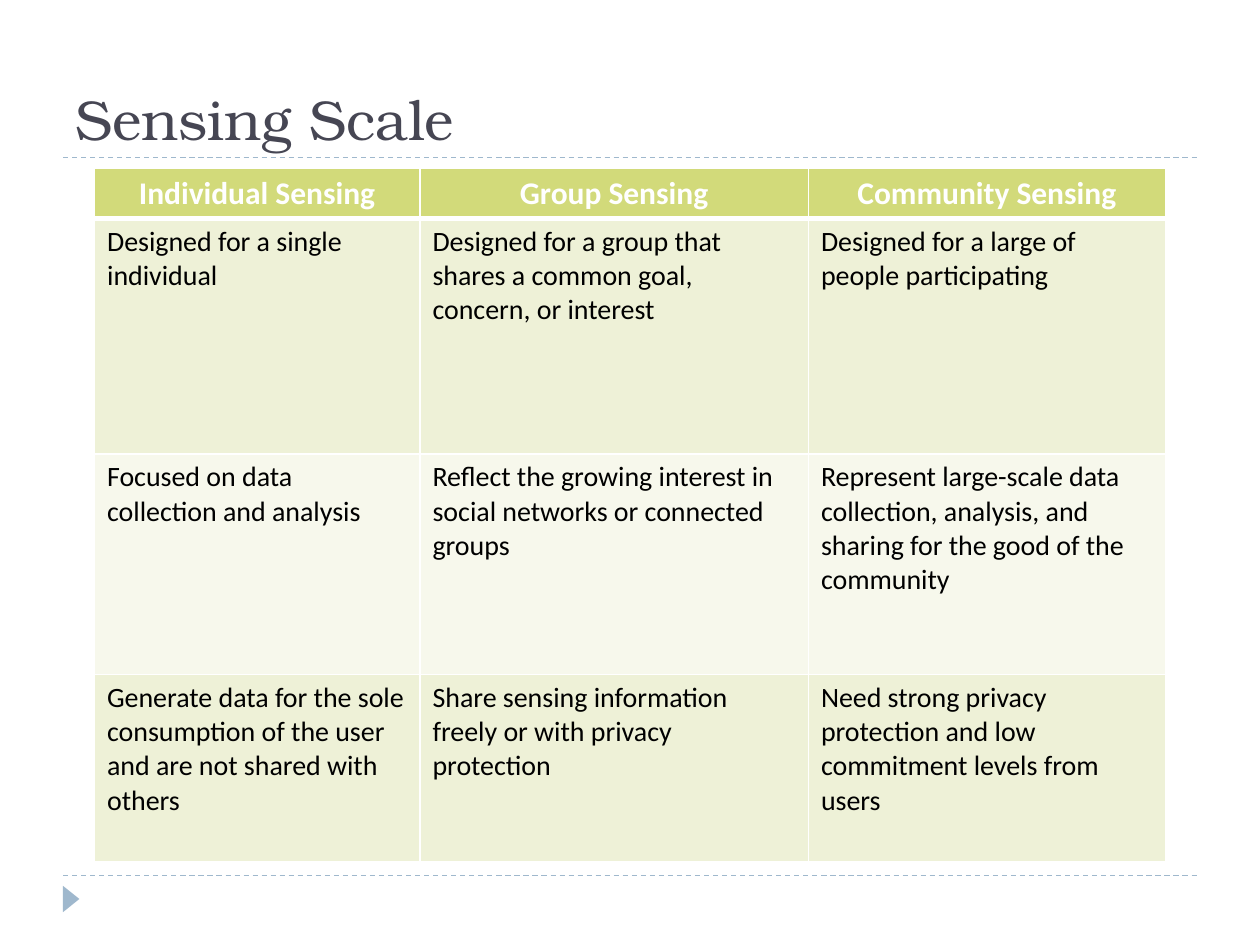
from lxml import etree
from pptx import Presentation, util as u
from pptx.dml.color import RGBColor
from pptx.enum import dml, shapes, text
from pptx.oxml import ns

Pt = u.Pt
HUE = {"rule": "9FB8CD", "title": "464653", "head": "D2DA7A",
       "dark": "EEF1D7", "light": "F7F8EC", "white": "FFFFFF", "black": "000000"}


def write(para, words, font, size, hue, bold=False):
    run = para.add_run()
    run.text = words
    run.font.name = font
    run.font.size = Pt(size)
    run.font.bold = bold
    run.font.color.rgb = RGBColor.from_string(HUE[hue])


def edge(cell, side, width):
    props = cell._tc.get_or_add_tcPr()
    line = etree.SubElement(props, ns.qn("a:" + side), w=str(Pt(width)))
    fill = etree.SubElement(line, ns.qn("a:solidFill"))
    etree.SubElement(fill, ns.qn("a:srgbClr"), val=HUE["white"])


deck = Presentation()
deck.slide_width, deck.slide_height = Pt(720), Pt(540)
slide = deck.slides.add_slide(deck.slide_layouts[6])

# Dashed rules above and below the table
for y in (500.4, 90):
    rule = slide.shapes.add_connector(
        shapes.MSO_CONNECTOR.STRAIGHT, Pt(36), Pt(y), Pt(684), Pt(y))
    rule.line.color.rgb = RGBColor.from_string(HUE["rule"])
    rule.line.width = Pt(0.75)
    rule.line.dash_style = dml.MSO_LINE.DASH
    etree.SubElement(rule._element.spPr, ns.qn("a:effectLst"))

# Corner marker
mark = slide.shapes.add_shape(
    shapes.MSO_SHAPE.ISOSCELES_TRIANGLE, Pt(33.1), Pt(509), Pt(15.1), Pt(9.4))
mark.rotation = 90
mark.shadow.inherit = False
mark.fill.solid()
mark.fill.fore_color.rgb = RGBColor.from_string(HUE["rule"])
mark.line.fill.background()

# Title
title = slide.shapes.add_textbox(Pt(36), Pt(12.2), Pt(648), Pt(77.8))
title.text_frame.word_wrap = True
title.text_frame.vertical_anchor = text.MSO_ANCHOR.BOTTOM
write(title.text_frame.paragraphs[0], "Sensing Scale", "TeX Gyre Bonum", 32, "title")

# Table: one header row, then banded rows
ROWS = [
    ("Individual Sensing", "Group Sensing", "Community Sensing"),
    ("Designed for a single individual",
     "Designed for a group that shares a common goal, concern, or interest",
     "Designed for a large of people participating"),
    ("Focused on data collection and analysis",
     "Reflect the growing interest in social networks or connected groups",
     "Represent large-scale data collection, analysis, and sharing "
     "for the good of the community"),
    ("Generate data for the sole consumption of the user "
     "and are not shared with others",
     "Share sensing information freely or with privacy protection",
     "Need strong privacy protection and low commitment levels from users"),
]
WIDE = (186, 222, 204)
HIGH = (28.8, 134.6, 126, 107)
BANDS = ("head", "dark", "light", "dark")

grid = slide.shapes.add_table(
    len(ROWS), len(WIDE), Pt(54), Pt(96), Pt(sum(WIDE)), Pt(sum(HIGH))).table
for col, width in zip(grid.columns, WIDE):
    col.width = Pt(width)
for r, (words, high, band) in enumerate(zip(ROWS, HIGH, BANDS)):
    grid.rows[r].height = Pt(high)
    for c, phrase in enumerate(words):
        cell = grid.cell(r, c)
        for side in ("lnL", "lnR", "lnT", "lnB"):
            thick = (r, side) in ((0, "lnB"), (1, "lnT"))
            edge(cell, side, 3 if thick else 1)
        cell.fill.solid()
        cell.fill.fore_color.rgb = RGBColor.from_string(HUE[band])
        para = cell.text_frame.paragraphs[0]
        if r == 0:
            para.alignment = text.PP_ALIGN.CENTER
            write(para, phrase, "Calibri", 18, "white", True)
        else:
            write(para, phrase, "Calibri", 16, "black")

deck.save("out.pptx")
